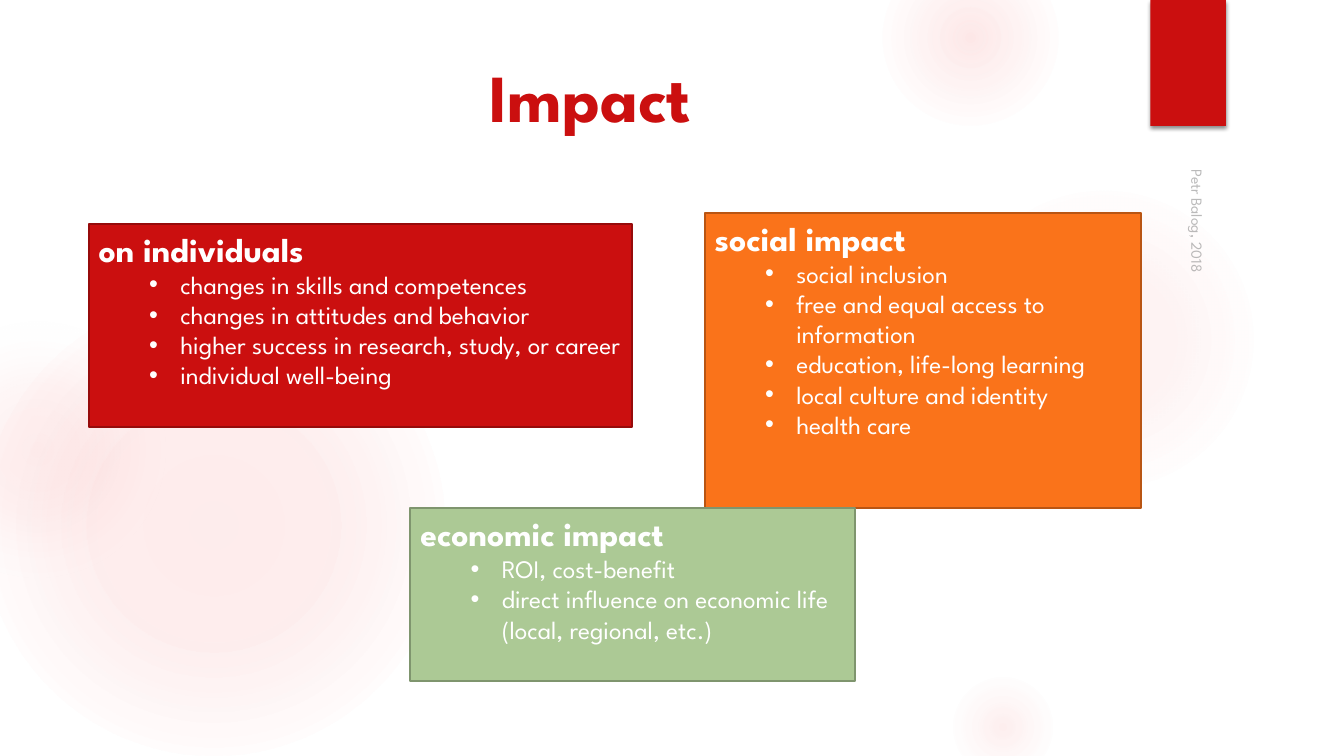
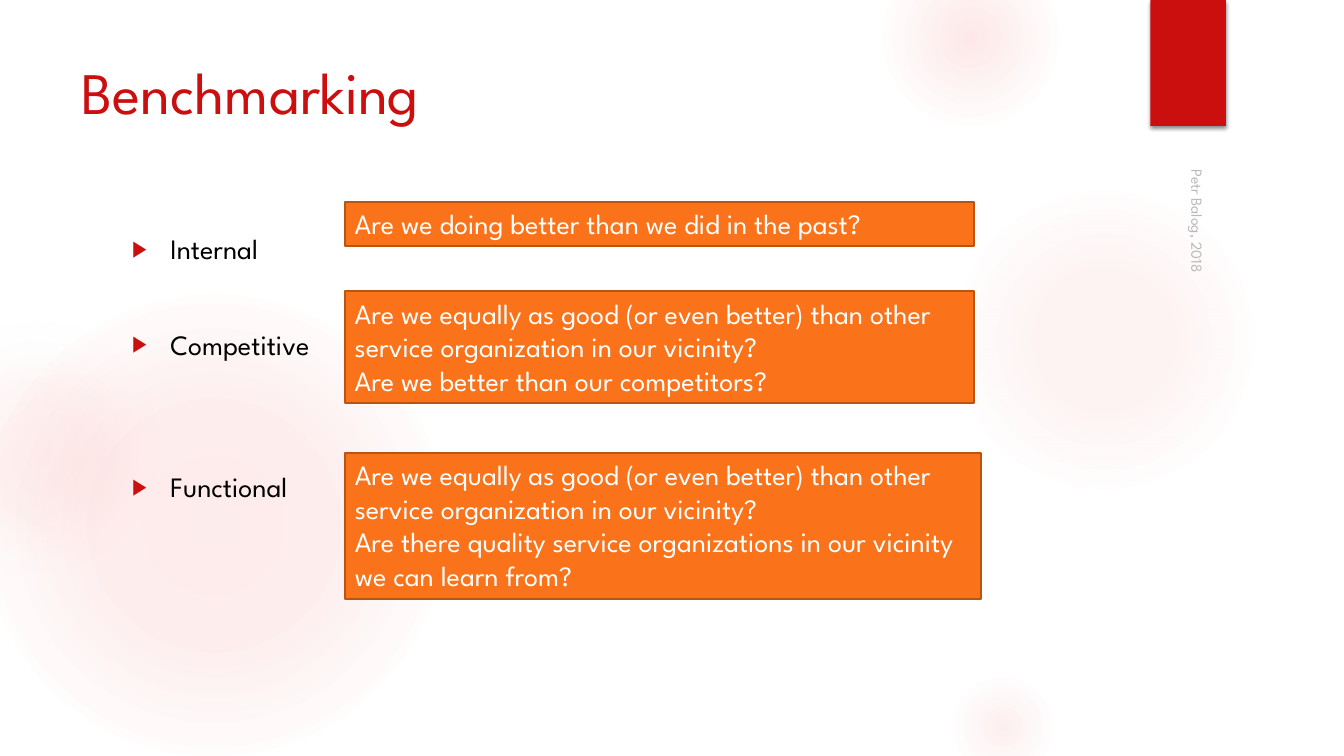
from pptx import Presentation
from pptx.dml.color import RGBColor
from pptx.enum.shapes import MSO_SHAPE
from pptx.enum.text import MSO_ANCHOR, MSO_AUTO_SIZE, PP_ALIGN
from pptx.oxml import parse_xml
from pptx.oxml.ns import nsdecls, qn
from pptx.util import Pt

RECT, OVAL = MSO_SHAPE.RECTANGLE, MSO_SHAPE.OVAL
TOP, BOTTOM = MSO_ANCHOR.TOP, MSO_ANCHOR.BOTTOM
LEFT, CENTER = PP_ALIGN.LEFT, PP_ALIGN.CENTER
NO_FIT = MSO_AUTO_SIZE.NONE

PX = 9144
FONT = "League Spartan"
RED = RGBColor(0xCB, 0x0F, 0x0F)
DARK_RED = RGBColor(0x96, 0x0B, 0x0B)
ORANGE = RGBColor(0xFA, 0x73, 0x1A)
DARK_ORANGE = RGBColor(0xB9, 0x55, 0x13)
GREEN = RGBColor(0xAC, 0xC9, 0x95)
DARK_GREEN = RGBColor(0x7F, 0x95, 0x6E)
GLOW = RGBColor(0xF3, 0x5C, 0x5C)
PALE = RGBColor(0xF3, 0xF3, 0xF3)
GRAY = RGBColor(0x8C, 0x8C, 0x8C)
BLACK = RGBColor(0, 0, 0)
WHITE = RGBColor(0xFF, 0xFF, 0xFF)

RED_BOX = (RED, DARK_RED)
ORANGE_BOX = (ORANGE, DARK_ORANGE)
GREEN_BOX = (GREEN, DARK_GREEN)

GLOWS = [
    (-17, 292, 458, [(0, GLOW, 11), (36, GLOW, 10), (75, GLOW, 0)]),
    (-92, 317, 258, [(0, GLOW, 8), (36, GLOW, 5), (71, PALE, 0)]),
    (941, 183, 308, [(0, GLOW, 7), (36, GLOW, 6), (69, GLOW, 0)]),
    (875, -50, 175, [(0, GLOW, 14), (36, GLOW, 7), (73, GLOW, 0)]),
    (941, 667, 108, [(0, GLOW, 10), (31, GLOW, 5), (66, GLOW, 0)]),
]


def px(*lengths):
    """Turn px lengths into EMU."""
    return [n * PX for n in lengths]


def add_xml(parent, xml):
    """Append a DrawingML element to its parent."""
    el = parse_xml(xml.replace(">", f" {nsdecls('a')}>", 1)
                   if "/>" not in xml.split(">")[0] + ">"
                   else xml.replace("/>", f" {nsdecls('a')}/>", 1))
    parent.append(el)
    return el


def add_text(tf, text, size=20, color=WHITE, bold=False, align=LEFT,
             bullet=None, indent=0, bullet_color=None, bullet_size=100, before=0):
    """Add a formatted paragraph to a text frame and return its run."""
    p = tf.add_paragraph() if tf.text else tf.paragraphs[0]
    if bullet:
        pPr = p._p.get_or_add_pPr()
        left, hanging = px(*indent)
        pPr.set("marL", str(left))
        pPr.set("indent", str(-hanging))
        if bullet_color is not None:
            add_xml(pPr, f'<a:buClr><a:srgbClr val="{bullet_color}"/></a:buClr>')
        add_xml(pPr, f'<a:buSzPct val="{bullet_size * 1000}"/>')
        add_xml(pPr, '<a:buFont typeface="Arial"/>')
        add_xml(pPr, f'<a:buChar char="{bullet}"/>')
    p.alignment = align
    p.space_before, p.space_after = Pt(before), Pt(0)
    r = p.add_run()
    r.text = text
    r.font.name, r.font.size, r.font.bold = FONT, Pt(size), bold
    r.font.color.rgb = color
    return r


class Deck:
    """Hold the shared style and the current slide."""

    def __init__(self):
        """Start a widescreen presentation."""
        self.prs = Presentation()
        self.prs.slide_width, self.prs.slide_height = px(1333, 750)
        self.s = None

    def slide(self, layout, title, **style):
        """Add a slide with its title and side credit."""
        first = self.s is None
        self.s = self.prs.slides.add_slide(self.prs.slide_layouts[layout])
        if first:
            self.background()
        tf = self.place(self.s.shapes.title, 71, 50, 1029, 153)
        add_text(tf, title, color=RED, **style)
        self.credit("Petr Balog, 2018")

    def background(self):
        """Draw the glows and the ribbon and move them to the master."""
        shapes = [self.glow(*glow) for glow in GLOWS] + [self.ribbon()]
        tree = self.prs.slide_master.shapes.element
        for i, sp in enumerate(shapes):
            tree.insert(2 + i, sp.element)

    def shape(self, kind, x, y, w, h):
        """Add a preset shape without line or shadow."""
        sp = self.s.shapes.add_shape(kind, *px(x, y, w, h))
        sp.shadow.inherit = False
        sp.line.fill.background()
        return sp

    def glow(self, x, y, d, stops):
        """Add a circle that fades out from its centre."""
        sp = self.shape(OVAL, x, y, d, d)
        sp.fill.background()
        spPr = sp.element.spPr
        gs = "".join(
            f'<a:gs pos="{pos * 1000}"><a:srgbClr val="{color}">'
            f'<a:alpha val="{alpha * 1000}"/></a:srgbClr></a:gs>'
            for pos, color, alpha in stops)
        grad = add_xml(spPr, f'<a:gradFill><a:gsLst>{gs}</a:gsLst><a:path path="circle">'
                       '<a:fillToRect l="50000" t="50000" r="50000" b="50000"/>'
                       '</a:path></a:gradFill>')
        spPr.replace(spPr.find(qn("a:noFill")), grad)
        return sp

    def ribbon(self):
        """Add the red ribbon with its soft shadow."""
        sp = self.shape(RECT, 1141, 0, 75, 125)
        sp.fill.solid()
        sp.fill.fore_color.rgb = RED
        add_xml(sp.element.spPr.find(qn("a:effectLst")),
                f'<a:outerShdw blurRad="{Pt(3)}" dist="{Pt(2)}" dir="5400000">'
                '<a:srgbClr val="000000"><a:alpha val="45000"/></a:srgbClr></a:outerShdw>')
        return sp

    def place(self, sp, x, y, w, h):
        """Move a placeholder and return its top-anchored text frame."""
        sp.left, sp.top, sp.width, sp.height = px(x, y, w, h)
        tf = sp.text_frame
        tf.auto_size, tf.vertical_anchor, tf.word_wrap = NO_FIT, TOP, True
        return tf

    def credit(self, text):
        """Add the rotated credit below the ribbon."""
        sp = self.s.shapes.add_textbox(*px(979, 353, 422, 33))
        sp.rotation = 90
        tf = sp.text_frame
        tf.word_wrap, tf.vertical_anchor = True, BOTTOM
        r = add_text(tf, text, size=11, color=GRAY)
        add_xml(r.font.color._color._xClr, '<a:alpha val="60000"/>')

    def box(self, x, y, w, h, colors, lines=(), heading=None, items=()):
        """Add a filled box with plain lines or a heading and bullets."""
        sp = self.shape(RECT, x, y, w, h)
        fill, line = colors
        sp.fill.solid()
        sp.fill.fore_color.rgb = fill
        sp.line.color.rgb = line
        sp.line.width = Pt(1.5)
        tf = sp.text_frame
        tf.word_wrap, tf.vertical_anchor = True, TOP
        if heading:
            add_text(tf, heading, size=24, bold=True)
        for text in lines:
            add_text(tf, text)
        for text in items:
            add_text(tf, text, size=18, bullet="•", indent=(81, 31))

    def body(self, x, y, w, h, items):
        """Fill the body placeholder with widely spaced bullets."""
        tf = self.place(self.s.placeholders[1], x, y, w, h)
        for text, before in items:
            add_text(tf, text, color=BLACK, bullet="▶", indent=(38, 38),
                     bullet_color=RED, bullet_size=80, before=before)


def main():
    """Build and save the slides."""
    deck = Deck()

    deck.slide(5, "Impact", size=48, bold=True, align=CENTER)
    deck.box(88, 222, 539, 202, RED_BOX, heading="on individuals", items=[
        "changes in skills and competences",
        "changes in attitudes and behavior",
        "higher success in research, study, or career",
        "individual well-being"])
    deck.box(699, 211, 433, 293, ORANGE_BOX, heading="social impact", items=[
        "social inclusion",
        "free and equal access to information",
        "education, life-long learning",
        "local culture and identity",
        "health care"])
    deck.box(407, 504, 441, 172, GREEN_BOX, heading="economic impact", items=[
        "ROI, cost-benefit",
        "direct influence on economic life (local, regional, etc.)"])

    deck.slide(1, "Benchmarking", size=42)
    deck.body(121, 225, 978, 459,
              [("Internal", 0), ("Competitive", 44), ("Functional", 78)])
    as_good = ("Are we equally as good (or even better) than other "
               "service organization in our vicinity?")
    for y, w, h, lines in [
            (200, 624, 44, ["Are we doing better than we did in the past?"]),
            (289, 624, 111, [as_good, "Are we better than our competitors?"]),
            (449, 631, 145, [as_good, "Are there quality service organizations "
                                      "in our vicinity we can learn from?"])]:
        deck.box(342, y, w, h, ORANGE_BOX, lines=lines)

    deck.prs.save("out.pptx")


if __name__ == "__main__":
    main()
